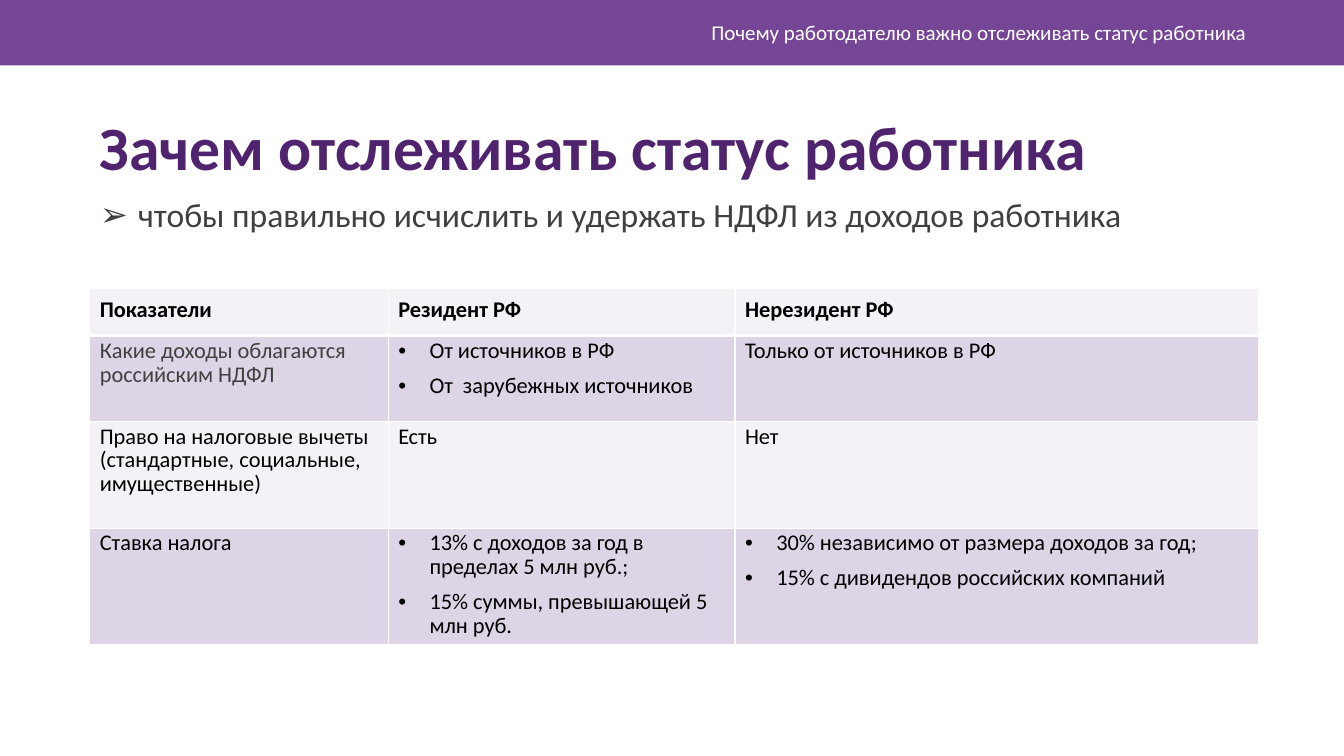
from dataclasses import dataclass

from lxml import etree
from pptx import Presentation
from pptx import util as u
from pptx.dml.color import RGBColor
from pptx.enum import shapes, text
from pptx.oxml.ns import qn

SECTION = "Почему работодателю важно отслеживать статус работника"
HEADING = "Зачем отслеживать статус работника"
REASON = "чтобы правильно исчислить и удержать НДФЛ из доходов работника"
INDICATORS = [
    ("Показатели", "Резидент РФ", "Нерезидент РФ"),
    (
        "Какие доходы облагаются российским НДФЛ",
        ["От источников в РФ", "От  зарубежных источников"],
        "Только от источников в РФ",
    ),
    ("Право на налоговые вычеты (стандартные, социальные, имущественные)", "Есть", "Нет"),
    (
        "Ставка налога",
        ["13% с доходов за год в пределах 5 млн руб.;", "15% суммы, превышающей 5 млн руб."],
        ["30% независимо от размера доходов за год;", "15% с дивидендов российских компаний"],
    ),
]
COLUMN_WIDTHS = (2.96, 3.44, 5.19)
ROW_HEIGHTS = (0.47, 0.85, 1.06, 1.16)
LEFT = 0.89


@dataclass(frozen=True)
class Theme:
    font: str = "Calibri"
    band: str = "764696"
    heading: str = "50236E"
    muted: str = "404040"
    ink: str = "000000"
    white: str = "FFFFFF"
    light_row: str = "F4F1F7"
    dark_row: str = "DDD4E6"
    section_size: int = 15
    heading_size: int = 44
    reason_size: int = 24
    table_size: int = 16


theme = Theme()


def write(frame, content, size, color, bold=False, align=text.PP_ALIGN.LEFT,
          anchor=text.MSO_ANCHOR.TOP, spacing=None, after=0, bullet=None, indent=0):
    frame.word_wrap = True
    frame.vertical_anchor = anchor
    lines = [content] if isinstance(content, str) else content
    for index, line in enumerate(lines):
        paragraph = frame.paragraphs[0] if index == 0 else frame.add_paragraph()
        if bullet:
            properties = paragraph._p.get_or_add_pPr()
            properties.set("marL", str(u.Inches(indent)))
            properties.set("indent", str(-u.Inches(indent)))
            etree.SubElement(properties, qn("a:buFont"), typeface="Arial")
            etree.SubElement(properties, qn("a:buChar"), char=bullet)
        paragraph.alignment = align
        paragraph.line_spacing = spacing
        paragraph.space_before = u.Pt(0)
        paragraph.space_after = u.Pt(after)
        run = paragraph.add_run()
        run.text = line
        run.font.name = theme.font
        run.font.size = u.Pt(size)
        run.font.bold = bold
        run.font.color.rgb = RGBColor.from_string(color)


def place(shape, left, top, width, height):
    shape.left, shape.top = u.Inches(left), u.Inches(top)
    shape.width, shape.height = u.Inches(width), u.Inches(height)
    shape.text_frame.auto_size = text.MSO_AUTO_SIZE.NONE


def outline(cell, bottom):
    properties = cell._tc.get_or_add_tcPr()
    sides = {"lnL": 1, "lnR": 1, "lnT": 1, "lnB": bottom}
    for position, (side, points) in enumerate(sides.items()):
        border = etree.Element(qn(f"a:{side}"), w=str(u.Pt(points)))
        fill = etree.SubElement(border, qn("a:solidFill"))
        etree.SubElement(fill, qn("a:srgbClr"), val=theme.white)
        properties.insert(position, border)


def add_indicators(slide):
    table = slide.shapes.add_table(
        len(ROW_HEIGHTS), len(COLUMN_WIDTHS), u.Inches(LEFT), u.Inches(2.86),
        u.Inches(sum(COLUMN_WIDTHS)), u.Inches(sum(ROW_HEIGHTS)),
    ).table
    table.first_row = table.horz_banding = False
    for column, width in zip(table.columns, COLUMN_WIDTHS):
        column.width = u.Inches(width)
    for r, (height, entries) in enumerate(zip(ROW_HEIGHTS, INDICATORS)):
        table.rows[r].height = u.Inches(height)
        header = r == 0
        for c, entry in enumerate(entries):
            cell = table.cell(r, c)
            cell.fill.solid()
            cell.fill.fore_color.rgb = RGBColor.from_string(
                theme.dark_row if r % 2 else theme.light_row)
            outline(cell, bottom=3 if header else 1)
            write(cell.text_frame, entry, theme.table_size,
                  theme.muted if (r, c) == (1, 0) else theme.ink,
                  bold=header, spacing=u.Pt(17), after=8,
                  bullet="•" if isinstance(entry, list) else None, indent=0.31)
            cell.vertical_anchor = text.MSO_ANCHOR.MIDDLE if header else text.MSO_ANCHOR.TOP


def main():
    deck = Presentation()
    deck.slide_width, deck.slide_height = u.Inches(13.33), u.Inches(7.5)
    slide = deck.slides.add_slide(deck.slide_layouts[1])

    band = slide.shapes.add_shape(
        shapes.MSO_SHAPE.RECTANGLE, 0, 0, deck.slide_width, u.Inches(0.65))
    band.shadow.inherit = False
    band.fill.solid()
    band.fill.fore_color.rgb = RGBColor.from_string(theme.band)
    band.line.fill.background()

    section = slide.shapes.add_textbox(
        u.Inches(3.58), u.Inches(0.12), u.Inches(8.88), u.Inches(0.4))
    write(section.text_frame, SECTION, theme.section_size, theme.white,
          align=text.PP_ALIGN.RIGHT, anchor=text.MSO_ANCHOR.MIDDLE)

    heading, reason = slide.placeholders
    place(heading, LEFT, 1.11, 12.15, 0.77)
    write(heading.text_frame, HEADING, theme.heading_size, theme.heading,
          bold=True, spacing=0.9)
    place(reason, LEFT, 1.92, 12.15, 0.5)
    write(reason.text_frame, REASON, theme.reason_size, theme.muted,
          spacing=0.9, bullet="➢", indent=0.38)

    add_indicators(slide)
    deck.save("out.pptx")


if __name__ == "__main__":
    main()
